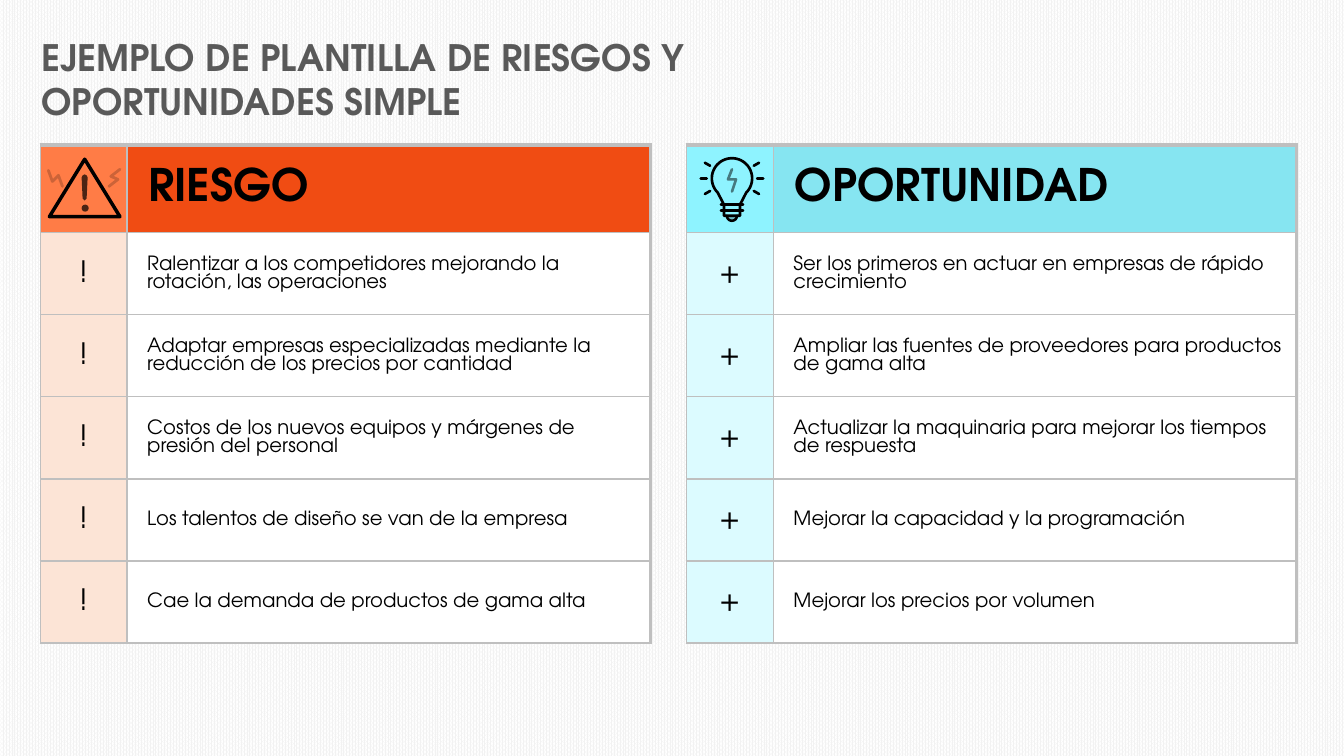
import math
import pptx
import pptx.util
import pptx.dml.color
import pptx.enum.dml
import pptx.enum.shapes
import pptx.enum.text
import pptx.oxml
import pptx.oxml.ns

# Content
TITLE = "EJEMPLO DE PLANTILLA DE RIESGOS Y OPORTUNIDADES SIMPLE"
RISKS = [
    "Ralentizar a los competidores mejorando la rotación, las operaciones",
    "Adaptar empresas especializadas mediante la reducción de los precios por cantidad",
    "Costos de los nuevos equipos y márgenes de\vpresión del personal",
    "Los talentos de diseño se van de la empresa",
    "Cae la demanda de productos de gama alta",
]
GAINS = [
    "Ser los primeros en actuar en empresas de rápido crecimiento",
    "Ampliar las fuentes de proveedores para productos de gama alta",
    "Actualizar la maquinaria para mejorar los tiempos de respuesta",
    "Mejorar la capacidad y la programación",
    "Mejorar los precios por volumen",
]
COLORS = {
    "title": "595959", "ink": "000000", "edge": "BFBFBF", "white": "FFFFFF", "dots": "F2F2F2",
    "risk icon": "FF7C46", "risk head": "F04C13", "risk mark": "FCE4D6",
    "gain icon": "8EF3FF", "gain head": "86E5F1", "gain mark": "DCFBFF",
}
TABLES = [
    {"left": 0.4, "key": "risk", "head": "RIESGO", "mark": "!", "items": RISKS},
    {"left": 6.81, "key": "gain", "head": "OPORTUNIDAD", "mark": "+", "items": GAINS},
]
FONT = "TeX Gyre Adventor"
TOP, COLS, HEAD, HEIGHT = 1.44, (0.86, 5.19), 0.87, 4.94
STYLES = {
    "title": {"size": 26, "bold": True, "color": "title"},
    "head": {"size": 32, "bold": True, "color": "ink"},
    "mark": {"size": 21, "bold": False, "color": "ink"},
    "item": {"size": 14, "bold": False, "color": "ink"},
}

Inches, Pt = pptx.util.Inches, pptx.util.Pt
ALIGN = pptx.enum.text.PP_ALIGN
SHAPES = pptx.enum.shapes.MSO_SHAPE
NS = pptx.oxml.ns.nsdecls("a")


def tint(name):
    return pptx.dml.color.RGBColor.from_string(COLORS[name])


def write(frame, text, style, align=ALIGN.LEFT):
    frame.text = text
    para = frame.paragraphs[0]
    para.alignment = align
    form = STYLES[style]
    for run in para.runs:
        run.font.color.rgb = tint(form["color"])
        for name, value in {"name": FONT, "size": Pt(form["size"]), "bold": form["bold"]}.items():
            setattr(run.font, name, value)


def border(cell, widths):
    props = cell._tc.get_or_add_tcPr()
    for index, side in enumerate("LRTB"):
        props.insert(index, pptx.oxml.parse_xml(
            f'<a:ln{side} {NS} w="{int(Pt(widths.get(side, 1)))}"><a:solidFill>'
            f'<a:srgbClr val="{COLORS["edge"]}"/></a:solidFill></a:ln{side}>'))


def paint(cell, name, left=0.01):
    cell.fill.solid()
    cell.fill.fore_color.rgb = tint(name)
    form = {"vertical_anchor": pptx.enum.text.MSO_ANCHOR.MIDDLE, "margin_left": Inches(left),
            "margin_right": Inches(0.01), "margin_top": Inches(0.01), "margin_bottom": 0}
    for key, value in form.items():
        setattr(cell, key, value)


def fade(shape, alpha):
    for color in shape._element.spPr.iter(pptx.oxml.ns.qn("a:srgbClr")):
        color.append(pptx.oxml.parse_xml(f'<a:alpha {NS} val="{alpha * 1000}"/>'))


def trace(shapes, points, close=False):
    first, *rest = [(Inches(x), Inches(y)) for x, y in points]
    pen = shapes.build_freeform(*first, scale=1.0)
    pen.add_line_segments(rest, close=close)
    return pen.convert_to_shape()


def stroke(shape, width, alpha=100):
    shape.shadow.inherit = False
    shape.fill.background()
    shape.line.color.rgb = tint("ink")
    shape.line.width = Pt(width)
    line = shape.line._get_or_add_ln()
    line.set("cap", "rnd")
    line.append(pptx.oxml.parse_xml(f"<a:round {NS}/>"))
    fade(shape, alpha)


def solid(shape, alpha):
    shape.shadow.inherit = False
    shape.fill.solid()
    shape.fill.fore_color.rgb = tint("ink")
    shape.line.fill.background()
    fade(shape, alpha)


def arc(x, y, size, start, end):
    steps = [math.radians(start + (end - start) * n / 40) for n in range(41)]
    return [(x + size * math.cos(a), y + size * math.sin(a)) for a in steps]


def draw_table(shapes, data):
    count = len(data["items"])
    table = shapes.add_table(count + 1, 2, Inches(data["left"]), Inches(TOP),
                             Inches(sum(COLS)), Inches(HEIGHT)).table
    table.first_row = table.horz_banding = False
    for column, width in zip(table.columns, COLS):
        column.width = Inches(width)
    for index, row in enumerate(table.rows):
        row.height = Inches((HEIGHT - HEAD) / count if index else HEAD)
        mark, main = row.cells
        if index:
            paint(mark, data["key"] + " mark")
            paint(main, "white", 0.2)
            write(mark.text_frame, data["mark"], "mark", ALIGN.CENTER)
            write(main.text_frame, data["items"][index - 1], "item")
        else:
            paint(mark, data["key"] + " icon")
            paint(main, data["key"] + " head", 0.21)
            write(main.text_frame, data["head"], "head")
        top = 1 if index else 3
        border(mark, {"T": top})
        border(main, {"T": top, "R": 2.25})


def draw_alert(shapes):
    for bolt in ([(0.48, 1.69), (0.52, 1.8), (0.58, 1.74), (0.62, 1.85)],
                 [(1.19, 1.68), (1.1, 1.75), (1.17, 1.78), (1.08, 1.85)]):
        stroke(trace(shapes, bolt), 2, 20)
    stroke(trace(shapes, [(0.49, 2.15), (0.84, 1.58), (1.19, 2.15)], True), 2.5)
    bang = [(0.82, 1.97), (0.81, 1.76), (0.82, 1.74), (0.84, 1.73),
            (0.86, 1.74), (0.87, 1.76), (0.86, 1.97), (0.84, 1.99)]
    solid(trace(shapes, bang, True), 70)
    dot = [Inches(n) for n in (0.81, 2.03, 0.07, 0.07)]
    solid(shapes.add_shape(SHAPES.OVAL, *dot), 70)


def draw_bulb(shapes):
    x, y = 7.26, 1.77
    base = arc(x, 2.14, 0.05, 0, 180)
    solid(trace(shapes, base, True), 24)
    stroke(trace(shapes, base), 1.8)
    neck = [(x + 0.08, 2.03), (x + 0.08, 2.14), (x - 0.08, 2.14), (x - 0.08, 2.03)]
    stroke(trace(shapes, arc(x, y, 0.2, 135, 405) + neck, True), 1.9)
    for rung in (2.03, 2.09):
        stroke(trace(shapes, [(x - 0.11, rung), (x + 0.11, rung)]), 1.8)
    # Rays
    for angle in (-30, 0, 30, 150, 180, 210):
        turn = math.radians(angle)
        ray = [(x + r * math.cos(turn), y + r * math.sin(turn)) for r in (0.25, 0.31)]
        stroke(trace(shapes, ray), 1.9)
    stroke(trace(shapes, [(x, 1.68), (7.22, 1.78), (7.3, 1.78), (x, 1.9)]), 1.9, 50)


def main():
    deck = pptx.Presentation()
    deck.slide_width, deck.slide_height = Inches(13.33), Inches(7.5)
    slide = deck.slides.add_slide(deck.slide_layouts[6])

    # Background
    back = slide.background.fill
    back.patterned()
    back.pattern = pptx.enum.dml.MSO_PATTERN.PERCENT_80
    back.fore_color.rgb = tint("dots")
    back.back_color.rgb = tint("white")

    # Title
    box = slide.shapes.add_textbox(Inches(0.31), Inches(0.3), Inches(8.77), Inches(0.98))
    box.text_frame.word_wrap = True
    write(box.text_frame, TITLE, "title")

    # Tables and icons
    for data in TABLES:
        draw_table(slide.shapes, data)
    draw_alert(slide.shapes)
    draw_bulb(slide.shapes)
    deck.save("out.pptx")


if __name__ == "__main__":
    main()
